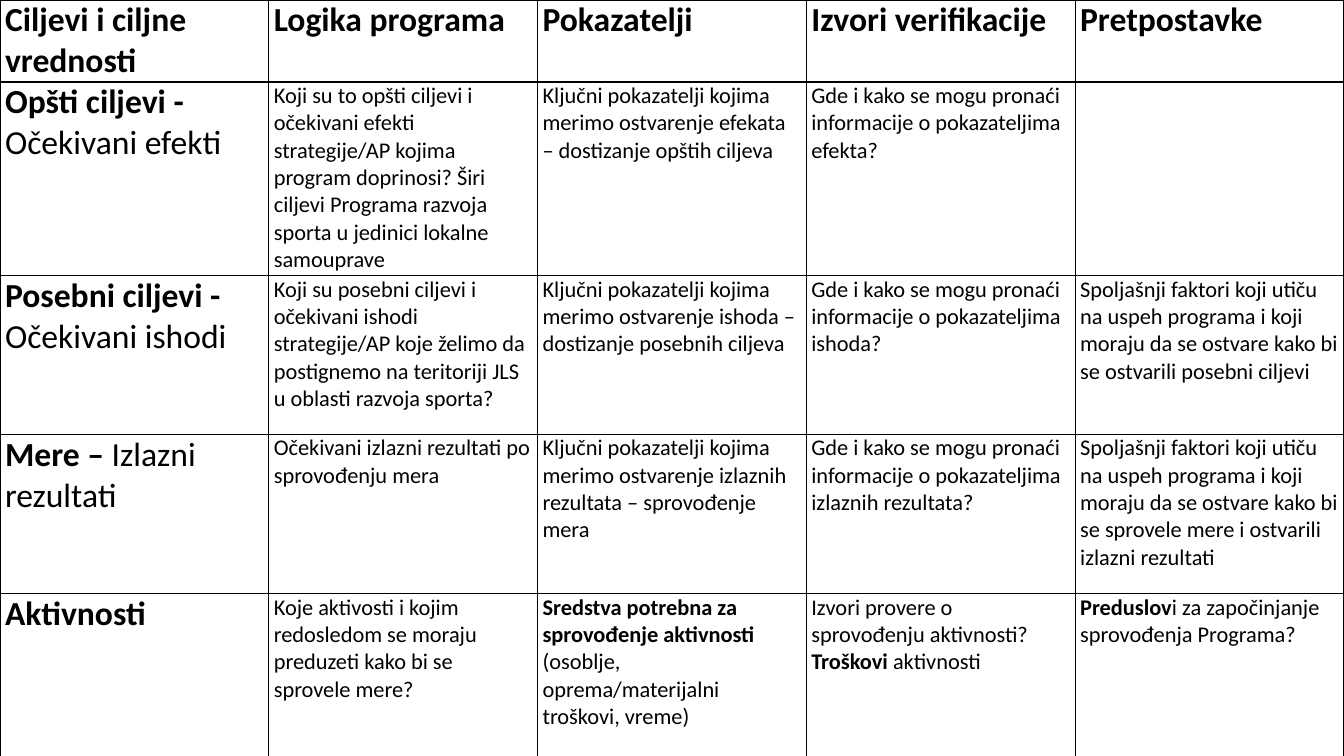
from lxml.etree import SubElement
from pptx import Presentation
from pptx.dml.color import RGBColor
from pptx.oxml.ns import qn
from pptx.util import Inches, Pt

SLIDE_WIDTH, SLIDE_HEIGHT = Inches(13.33), Inches(7.5)
BLACK = "000000"
FONT = "Calibri"
HEADING_SIZE, BODY_SIZE = 24, 16
ROW_HEIGHTS = [0.79, 1.92, 1.57, 1.58, 1.63]

# Asterisks enclose bold words.
MATRIX = [
    ["*Ciljevi i ciljne vrednosti*", "*Logika programa*", "*Pokazatelji*",
     "*Izvori verifikacije*", "*Pretpostavke*"],
    ["*Opšti ciljevi - *Očekivani efekti",
     "Koji su to opšti ciljevi i očekivani efekti strategije/AP kojima program "
     "doprinosi? Širi ciljevi Programa razvoja sporta u jedinici lokalne samouprave",
     "Ključni pokazatelji kojima merimo ostvarenje efekata – dostizanje opštih ciljeva",
     "Gde i kako se mogu pronaći informacije o pokazateljima efekta?",
     ""],
    ["*Posebni ciljevi - *Očekivani ishodi",
     "Koji su posebni ciljevi i očekivani ishodi strategije/AP koje želimo da "
     "postignemo na teritoriji JLS u oblasti razvoja sporta?",
     "Ključni pokazatelji kojima merimo ostvarenje ishoda – dostizanje posebnih ciljeva",
     "Gde i kako se mogu pronaći informacije o pokazateljima ishoda?",
     "Spoljašnji faktori koji utiču na uspeh programa i koji moraju da se ostvare "
     "kako bi se ostvarili posebni ciljevi"],
    ["*Mere – *Izlazni rezultati",
     "Očekivani izlazni rezultati po sprovođenju mera",
     "Ključni pokazatelji kojima merimo ostvarenje izlaznih rezultata – sprovođenje mera",
     "Gde i kako se mogu pronaći informacije o pokazateljima izlaznih rezultata?",
     "Spoljašnji faktori koji utiču na uspeh programa i koji moraju da se ostvare "
     "kako bi se sprovele mere i ostvarili izlazni rezultati"],
    ["*Aktivnosti*",
     "Koje aktivosti i kojim redosledom se moraju preduzeti kako bi se sprovele mere?",
     "*Sredstva potrebna za sprovođenje aktivnosti *(osoblje, oprema/materijalni "
     "troškovi, vreme)",
     "Izvori provere o sprovođenju aktivnosti? *Troškovi* aktivnosti",
     "*Preduslov*i za započinjanje sprovođenja Programa?"],
]


def color(value):
    """Turn a hex string into a colour."""
    return RGBColor.from_string(value)


def write_text(frame, text, size=BODY_SIZE, fill=BLACK, font=FONT):
    """Write text into a frame, with the words between asterisks in bold."""
    para = frame.paragraphs[0]
    para.font.size = Pt(size)
    for index, words in enumerate(text.split("*")):
        if words:
            span = para.add_run()
            span.text = words
            span.font.name = font
            span.font.size = Pt(size)
            span.font.bold = index % 2 == 1
            span.font.color.rgb = color(fill)


def draw_borders(cell, line=BLACK, width=1):
    """Give all four sides of a cell a solid line."""
    properties = cell._tc.get_or_add_tcPr()
    for side in ("a:lnL", "a:lnR", "a:lnT", "a:lnB"):
        border = SubElement(properties, qn(side), w=str(Pt(width)))
        solid = SubElement(border, qn("a:solidFill"))
        SubElement(solid, qn("a:srgbClr"), val=line)


def format_cell(cell):
    """Set the margins, borders and empty fill of a cell."""
    cell.margin_left = cell.margin_right = Inches(0.05)
    cell.margin_top = cell.margin_bottom = 0
    draw_borders(cell)
    cell.fill.background()


def add_matrix(page, left, top, width, height):
    """Place the logical framework table in the given box."""
    column_count = len(MATRIX[0])
    table = page.shapes.add_table(
        len(MATRIX), column_count, left, top, width, height).table
    table.first_row = table.horz_banding = False
    for column in table.columns:
        column.width = width // column_count
    for row, share in zip(table.rows, ROW_HEIGHTS):
        row.height = int(height * share / sum(ROW_HEIGHTS))
    for row_index, texts in enumerate(MATRIX):
        for column_index, text in enumerate(texts):
            cell = table.cell(row_index, column_index)
            format_cell(cell)
            is_heading = row_index == 0 or column_index == 0
            write_text(cell.text_frame, text,
                       size=HEADING_SIZE if is_heading else BODY_SIZE)


def main():
    """Build the deck and save it."""
    deck = Presentation()
    deck.slide_width, deck.slide_height = SLIDE_WIDTH, SLIDE_HEIGHT
    page = deck.slides.add_slide(deck.slide_layouts[6])
    add_matrix(page, 0, 0, SLIDE_WIDTH, SLIDE_HEIGHT)
    deck.save("out.pptx")


if __name__ == "__main__":
    main()
